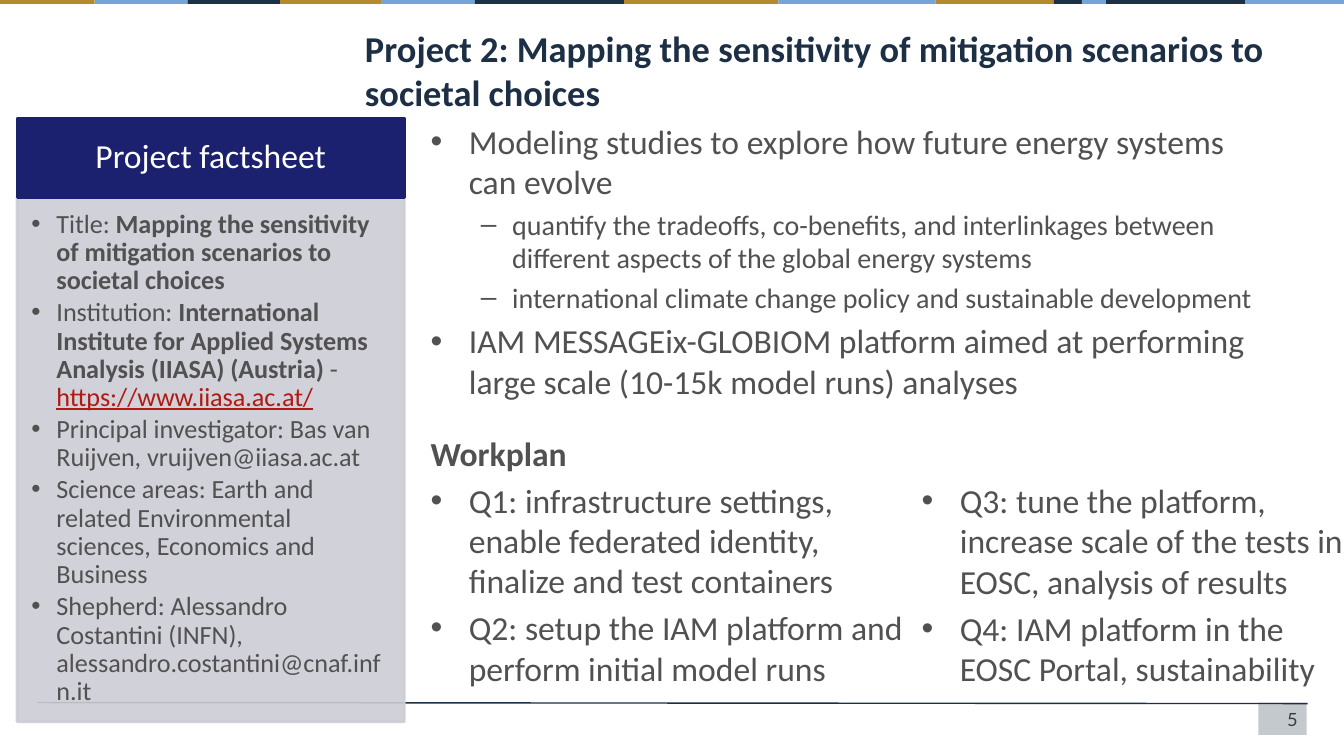
import itertools

import pptx
import pptx.dml.color
import pptx.enum.shapes
import pptx.enum.text
import pptx.oxml
import pptx.oxml.ns
import pptx.util

PX = 9144  # EMU per px, 100 px to the inch
NAVY, GOLD, BLUE = "1C3046", "B5892D", "75A5D8"
INK, GREY, PANEL, HEADER = "1D2F45", "515151", "CDCDD5", "1B216E"
ALIGN = pptx.enum.text.PP_ALIGN
ANCHOR = pptx.enum.text.MSO_ANCHOR


def rgb(value):
    return pptx.dml.color.RGBColor.from_string(value)


def px(value):
    return pptx.util.Emu(value * PX)


def xml(tag, attributes=""):
    return pptx.oxml.parse_xml(f"<a:{tag} {pptx.oxml.ns.nsdecls('a')} {attributes}/>")


class Sheet:
    """Style of the deck and the slide being filled."""

    font = "Calibri"

    def __init__(self, deck, layout):
        self.slide = deck.slides.add_slide(deck.slide_layouts[layout])

    def paint(self, shape, fill, line=None, opacity=100):
        shape.fill.solid()
        shape.fill.fore_color.rgb = rgb(fill)
        if line:
            shape.line.color.rgb = rgb(line)
            shape.line.width = pptx.util.Pt(2)
        else:
            shape.line.fill.background()
        if opacity < 100:
            for colour in shape._element.spPr.iter(pptx.oxml.ns.qn("a:srgbClr")):
                colour.append(xml("alpha", f'val="{opacity * 1000}"'))

    def rect(self, box, fill, line=None, opacity=100):
        shape = self.slide.shapes.add_shape(
            pptx.enum.shapes.MSO_SHAPE.RECTANGLE, *map(px, box))
        shape.shadow.inherit = False
        self.paint(shape, fill, line, opacity)
        return shape

    def rule(self, start, end, colour):
        line = self.slide.shapes.add_connector(
            pptx.enum.shapes.MSO_CONNECTOR.STRAIGHT, *map(px, start + end))
        line.line.color.rgb = rgb(colour)
        line.line.width = pptx.util.Pt(1)
        line._element.spPr.append(xml("effectLst"))
        tree = line._element.getparent()
        tree.insert(2, line._element)  # behind the panels

    def textbox(self, box):
        return self.slide.shapes.add_textbox(*map(px, box))

    def placeholder(self, idx, box):
        shape = self.slide.placeholders[idx]
        shape.left, shape.top, shape.width, shape.height = map(px, box)
        return shape

    def frame(self, shape, insets=(10, 5, 10, 5), anchor=ANCHOR.TOP):
        frame = shape.text_frame
        frame.word_wrap = True
        frame.auto_size = pptx.enum.text.MSO_AUTO_SIZE.NONE
        frame.vertical_anchor = anchor
        (frame.margin_left, frame.margin_top,
         frame.margin_right, frame.margin_bottom) = map(px, insets)
        return frame

    def paragraph(self, frame, runs, size, colour=GREY, bullet=None, indent=(0, 0),
                  level=0, before=0, after=0, spacing=1.0, align=ALIGN.LEFT, font=None):
        """Each run is (text, bold) or (text, bold, link colour)."""
        first = not frame.paragraphs[0].runs
        paragraph = frame.paragraphs[0] if first else frame.add_paragraph()
        properties = paragraph._p.get_or_add_pPr()
        properties.set("marL", str(px(indent[0])))
        properties.set("indent", str(px(indent[1])))
        properties.append(xml("buChar", f'char="{bullet}"') if bullet else xml("buNone"))
        paragraph.level = level
        paragraph.alignment = align
        paragraph.line_spacing = spacing
        paragraph.space_before = pptx.util.Pt(0 if first else before)
        paragraph.space_after = pptx.util.Pt(after)
        for text, bold, *link in runs:
            run = paragraph.add_run()
            run.text = text
            run.font.name = font or self.font
            run.font.size = pptx.util.Pt(size)
            run.font.bold = bold
            run.font.underline = bool(link)
            run.font.color.rgb = rgb(link[0] if link else colour)

    def bullet(self, frame, text):
        self.paragraph(frame, [(text, False)], 24, bullet="•", indent=(38, -38), before=4.8)

    def dash(self, frame, text):
        self.paragraph(frame, [(text, False)], 20, bullet="–", indent=(81, -31),
                       level=1, before=4)


def main():
    deck = pptx.Presentation()
    deck.slide_width, deck.slide_height = px(1333), px(750)
    sheet = Sheet(deck, 4)

    # Coloured strip along the top
    edges = [0, 94, 186, 278, 378, 471, 619, 772, 928, 1045, 1073, 1097, 1235, 1333]
    colours = [GOLD, BLUE, NAVY, GOLD, BLUE, NAVY, GOLD, BLUE, GOLD, NAVY, BLUE, NAVY, BLUE]
    for (left, right), colour in zip(itertools.pairwise(edges), colours):
        sheet.rect((left, 0, right - left, 4), colour)

    # Footer
    sheet.rule((37, 697), (1297, 698), INK)
    sheet.rect((1248, 697, 48, 32), INK, opacity=26)
    page = sheet.frame(sheet.textbox((956, 698, 341, 31)))
    sheet.paragraph(page, [("5", False)], 13, "3D3D3D", align=ALIGN.RIGHT, font="Lato")

    # Title
    title = sheet.frame(sheet.placeholder(0, (352, 21, 956, 59)))
    sheet.paragraph(title, [("Project 2: Mapping the sensitivity of mitigation scenarios "
                             "to societal choices", True)], 26, INK)

    # Factsheet
    header = sheet.rect((17, 117, 384, 79), HEADER, HEADER)
    heading = sheet.frame(header, (19, 11, 19, 11), ANCHOR.MIDDLE)
    sheet.paragraph(heading, [("Project factsheet", False)], 24, "FFFFFF",
                    spacing=0.9, align=ALIGN.CENTER)
    panel = sheet.placeholder(4, (17, 195, 384, 521))
    sheet.paint(panel, PANEL, PANEL, 90)
    facts = sheet.frame(panel, (14, 14, 19, 21))
    for fact in (
        [("Title: ", False),
         ("Mapping the sensitivity of mitigation scenarios to societal choices", True)],
        [("Institution: ", False),
         ("International Institute for Applied Systems Analysis (IIASA) (Austria)", True),
         (" - ", False), ("https://www.iiasa.ac.at/", False, "B11913")],
        [("Principal investigator: Bas van Ruijven, vruijven@iiasa.ac.at", False)],
        [("Science areas: Earth and related Environmental sciences, "
          "Economics and Business", False)],
        [("Shepherd: Alessandro Costantini (INFN), "
          "alessandro.costantini@cnaf.infn.it", False)],
    ):
        sheet.paragraph(facts, fact, 18.67, bullet="•", indent=(25, -25),
                        after=2.8, spacing=0.9)

    # Project summary
    summary = sheet.frame(sheet.placeholder(1, (417, 115, 859, 301)))
    sheet.bullet(summary, "Modeling studies to explore how future energy systems can evolve")
    sheet.dash(summary, "quantify the tradeoffs, co-benefits, and interlinkages between "
                        "different aspects of the global energy systems")
    sheet.dash(summary, "international climate change policy and sustainable development")
    sheet.bullet(summary, "IAM MESSAGEix-GLOBIOM platform aimed at performing large scale "
                          "(10-15k model runs) analyses")

    # Workplan, two quarters to a column
    first_half = sheet.frame(sheet.placeholder(2, (417, 424, 492, 274)))
    sheet.paragraph(first_half, [("Workplan", True)], 24)
    sheet.bullet(first_half, "Q1: infrastructure settings, enable federated identity, "
                             "finalize and test containers")
    sheet.bullet(first_half, "Q2: setup the IAM platform and perform initial model runs")
    second_half = sheet.frame(sheet.placeholder(3, (904, 471, 446, 227)))
    sheet.bullet(second_half, "Q3: tune the platform, increase scale of the tests in EOSC, "
                              "analysis of results")
    sheet.bullet(second_half, "Q4: IAM platform in the EOSC Portal, sustainability")

    deck.save("out.pptx")


if __name__ == "__main__":
    main()
